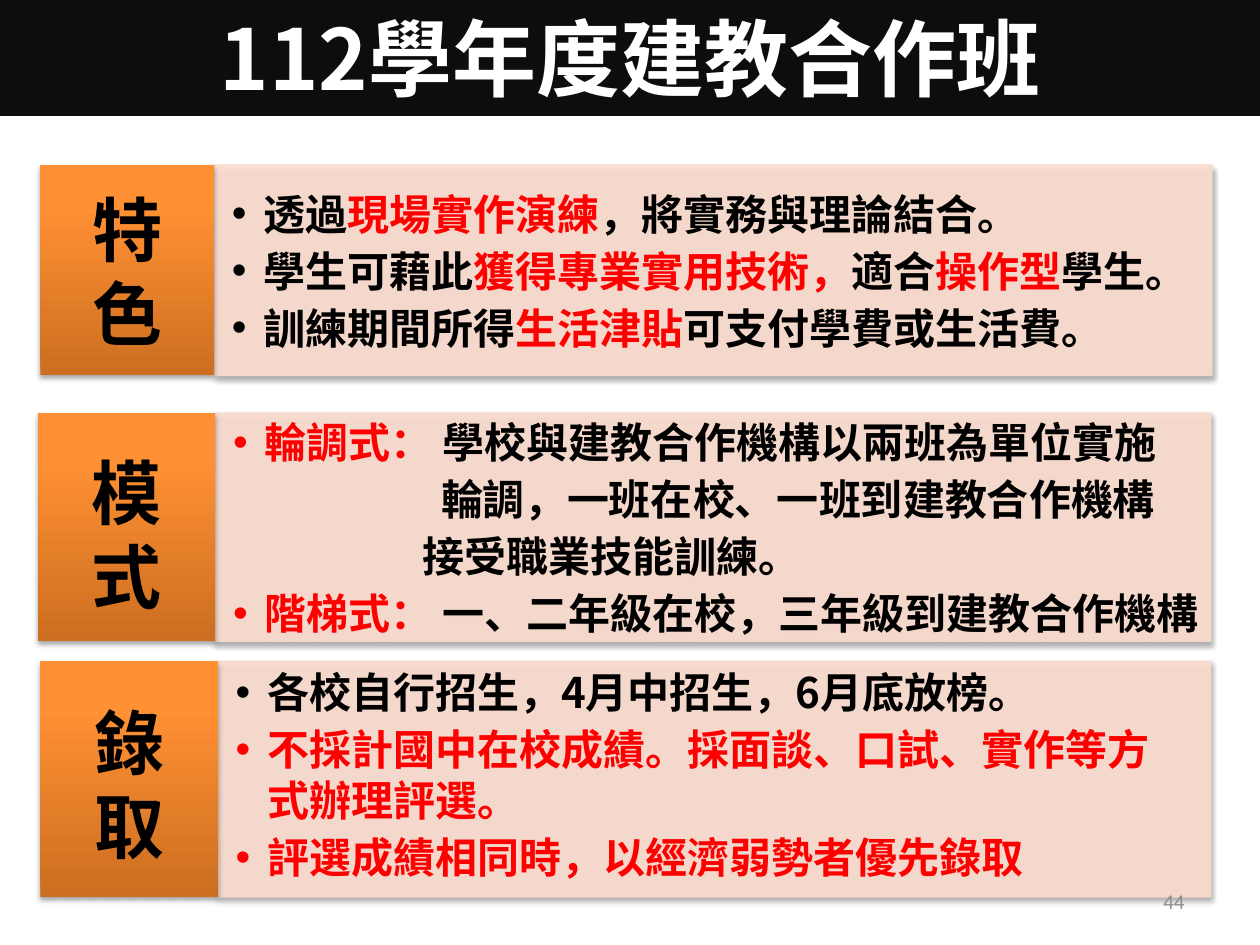
from lxml.etree import SubElement
from pptx import Presentation
from pptx.dml.color import RGBColor
from pptx.enum.shapes import MSO_SHAPE as Shape
from pptx.enum.text import MSO_ANCHOR as Anchor, MSO_AUTO_SIZE as AutoSize, PP_ALIGN as Align
from pptx.oxml.ns import qn
from pptx.util import Inches, Pt

CJK = "Noto Sans CJK SC"
BLACK, RED, WHITE = "000000", "FF0000", "FFFFFF"
PANEL, PANEL_EDGE = "FCDDCF", "F8D8C9"

FEATURES = [
    [("透過", BLACK), ("現場實作演練", RED), ("，將實務與理論結合。", BLACK)],
    [("學生可藉此", BLACK), ("獲得專業實用技術，", RED), ("適合", BLACK),
     ("操作型", RED), ("學生。", BLACK)],
    [("訓練期間所得", BLACK), ("生活津貼", RED), ("可支付學費或生活費。", BLACK)],
]
MODES = [
    [("輪調式：", RED), (" 學校與建教合作機構以兩班為單位實施", BLACK)],
    [("輪調，一班在校、一班到建教合作機構", BLACK)],
    [("接受職業技能訓練。", BLACK)],
    [("階梯式：", RED), (" 一、二年級在校，三年級到建教合作機構", BLACK)],
]
ADMISSION = [
    [("各校自行招生，4月中招生，6月底放榜。", BLACK)],
    [("不採計國中在校成績。採面談、口試、實作等方式辦理評選。", RED)],
    [("評選成績相同時，以經濟弱勢者優先錄取", RED)],
]


def paint(color_format, hex_color, opacity=100):
    """Set a colour from a hex string, with an opacity in percent."""
    color_format.rgb = RGBColor.from_string(hex_color)
    if opacity < 100:
        for color in color_format._xFill.iter(qn("a:srgbClr")):
            SubElement(color, qn("a:alpha"), val=str(opacity * 1000))


def write(paragraph, text, size=24, color=BLACK, font=CJK, bold=True):
    """Add a formatted run to a paragraph."""
    run = paragraph.add_run()
    run.text = text
    run.font.size, run.font.bold, run.font.name = Pt(size), bold, font
    paint(run.font.color, color)
    SubElement(run._r.get_or_add_rPr(), qn("a:ea"), typeface=font)


def set_frame(shape, left=0.1, top=0.05, right=0.1, bottom=0.05):
    """Set margins, wrapping and middle anchor, and return the text frame."""
    frame = shape.text_frame
    frame.margin_left, frame.margin_right = Inches(left), Inches(right)
    frame.margin_top, frame.margin_bottom = Inches(top), Inches(bottom)
    frame.word_wrap = True
    frame.auto_size = AutoSize.NONE
    frame.vertical_anchor = Anchor.MIDDLE
    return frame


def place(shape, left, top, width, height):
    """Move a shape into a box given in inches."""
    shape.left, shape.top = Inches(left), Inches(top)
    shape.width, shape.height = Inches(width), Inches(height)


def cast_shadow(shape):
    """Give a shape a soft shadow below it."""
    shape.shadow.inherit = False
    effects = shape._element.spPr.find(qn("a:effectLst"))
    shadow = SubElement(effects, qn("a:outerShdw"), blurRad=str(Pt(3.1)),
                        dist=str(Pt(1.8)), dir="5400000", rotWithShape="0")
    color = SubElement(shadow, qn("a:srgbClr"), val=BLACK)
    SubElement(color, qn("a:alpha"), val="35000")


def add_label(slide, text, box, drop):
    """Draw the orange label, with its text lowered by drop inches."""
    label = slide.shapes.add_shape(Shape.RECTANGLE, *map(Inches, box))
    label.fill.gradient()
    label.fill.gradient_angle = 90
    for stop, position, color in zip(label.fill.gradient_stops, (0, 0.8), ("CC6E20", "FF9034")):
        stop.position = position
        paint(stop.color, color)
    label.line.fill.background()
    cast_shadow(label)
    frame = set_frame(label, 0.19, 0.11 + 2 * drop, 0.19, 0.11)
    paragraph = frame.paragraphs[0]
    paragraph.alignment = Align.CENTER
    paragraph.line_spacing = Pt(48)
    write(paragraph, text, size=40)


def fill_panel(panel, items, box, indents, right, bottom):
    """Format a body placeholder as a panel; indented items carry no bullet."""
    place(panel, *box)
    panel.fill.solid()
    paint(panel.fill.fore_color, PANEL, 90)
    panel.line.width = Pt(0.75)
    panel.line.fill.solid()
    paint(panel.line.fill.fore_color, PANEL_EDGE, 90)
    cast_shadow(panel)
    frame = set_frame(panel, 0.14, 0.05, right, bottom)
    for index, item in enumerate(items):
        paragraph = frame.add_paragraph() if index else frame.paragraphs[0]
        properties = paragraph._p.get_or_add_pPr()
        bulleted = index not in indents
        properties.set("marL", str(Inches(indents.get(index, 0.25))))
        properties.set("indent", str(Inches(-0.25 if bulleted else 0)))
        if bulleted:
            SubElement(properties, qn("a:buChar"), char="•")
        else:
            SubElement(properties, qn("a:buNone"))
        paragraph.alignment = Align.LEFT
        paragraph.line_spacing = Pt(29)
        paragraph.space_before, paragraph.space_after = Pt(0), Pt(3.6)
        for text, color in item:
            write(paragraph, text, color=color)


def add_section(slide, panel, heading, items, box, label_width,
                drop=0, indents={}, right=0.05, bottom=0.05):
    """Split a box into an orange label and a list panel."""
    left, top, width, height = box
    fill_panel(panel, items, (left + label_width, top, width - label_width, height),
               indents, right, bottom)
    add_label(slide, heading, (left, top, label_width, height), drop)


def fill_title(title, text, box):
    """Format the title placeholder as a dark banner."""
    place(title, *box)
    title.fill.solid()
    paint(title.fill.fore_color, "0D0D0D")
    paragraph = set_frame(title).paragraphs[0]
    paragraph.alignment = Align.CENTER
    write(paragraph, text, size=48, color=WHITE)


def add_page_number(slide, text, box):
    """Write the page number at the right of its box."""
    number = slide.shapes.add_textbox(*map(Inches, box))
    paragraph = set_frame(number).paragraphs[0]
    paragraph.alignment = Align.RIGHT
    write(paragraph, text, size=12, color="8C8C8C", font="Calibri", bold=False)


def main():
    """Build and save the slide."""
    deck = Presentation()
    deck.slide_width, deck.slide_height = Inches(10), Inches(7.5)
    slide = deck.slides.add_slide(deck.slide_layouts[4])
    title, features, modes, admission, spare = slide.placeholders
    spare._element.getparent().remove(spare._element)

    fill_title(title, "112學年度建教合作班", (0, -0.02, 10, 0.94))
    add_section(slide, features, "特色", FEATURES, (0.32, 1.31, 9.3, 1.67), 1.38)
    add_section(slide, modes, "模式", MODES, (0.3, 3.28, 9.31, 1.81), 1.41,
                drop=0.05, indents={1: 1.65, 2: 1.5})
    add_section(slide, admission, "錄取", ADMISSION, (0.32, 5.25, 9.29, 1.87), 1.41,
                drop=0.03, right=0.38, bottom=0.13)
    add_page_number(slide, "44", (7.17, 6.95, 2.33, 0.4))
    deck.save("out.pptx")


if __name__ == "__main__":
    main()
